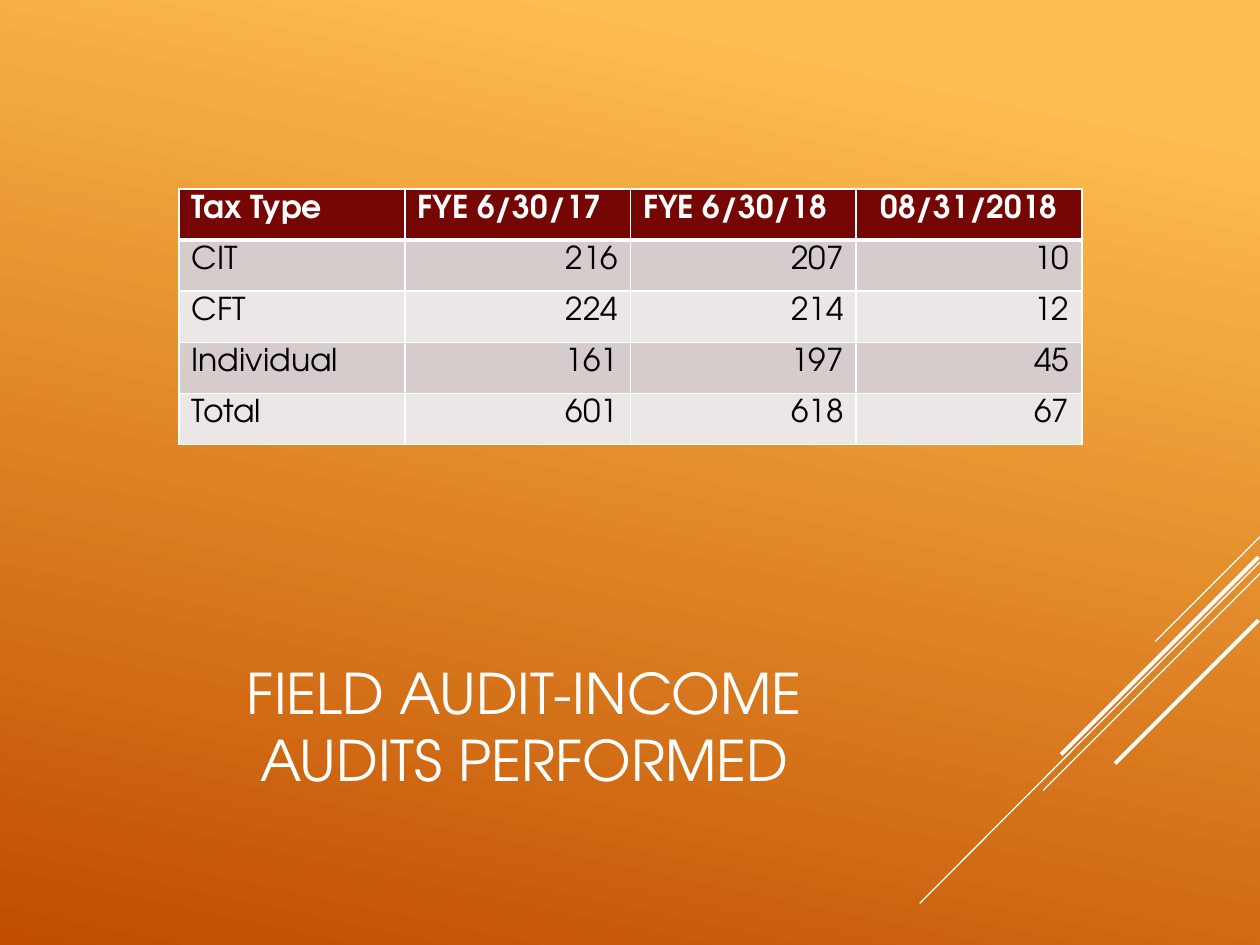
from lxml import etree
from pptx import Presentation, util as u
from pptx.dml.color import RGBColor
from pptx.enum import shapes, text
from pptx.oxml.ns import qn

COLORS = {"white": "FFFFFF", "black": "000000", "header": "760603", "odd": "D6CCCC",
          "even": "ECE7E7", "light": "FFBF50", "dark": "C04D00"}
ALIGN = {"l": text.PP_ALIGN.LEFT, "c": text.PP_ALIGN.CENTER, "r": text.PP_ALIGN.RIGHT}
ROWS = [("Tax Type", "FYE 6/30/17", "FYE 6/30/18", "08/31/2018"),
        ("CIT", "216", "207", "10"),
        ("CFT", "224", "214", "12"),
        ("Individual", "161", "197", "45"),
        ("Total", "601", "618", "67")]
STRIPES = [(25.4, 10.82, 23.29, 12.93, 0.75), (25.4, 11.33, 18.54, 18.21, 0.75),
           (25.4, 11.56, 21.03, 15.93, 0.75), (25.37, 11.23, 21.39, 15.21, 2.25),
           (25.37, 12.5, 22.48, 15.39, 2.25)]


def rgb(name):
    """Return the named colour."""
    return RGBColor.from_string(COLORS[name])


def write(tf, content, size=18, color="black", bold=False, align="l", font="TeX Gyre Adventor"):
    """Put formatted text into a text frame."""
    p = tf.paragraphs[0]
    p.text = content
    p.alignment = ALIGN[align]
    for r in p.runs:
        r.font.name, r.font.size, r.font.bold = font, u.Pt(size), bold
        r.font.color.rgb = rgb(color)


class Deck:
    """Hold the style and the current slide."""

    def __init__(self, prs):
        """Add a title-only slide."""
        self.s = prs.slides.add_slide(prs.slide_layouts[5])

    def background(self, angle):
        """Fill the background with a gradient."""
        fill = self.s.background.fill
        fill.gradient()
        fill.gradient_angle = angle
        for stop, name, pos in zip(fill.gradient_stops, ("light", "dark"), (0.1, 1)):
            stop.color.rgb, stop.position = rgb(name), pos

    def line(self, x1, y1, x2, y2, width):
        """Draw a white line."""
        sp = self.s.shapes.add_connector(shapes.MSO_CONNECTOR.STRAIGHT,
                                         *map(u.Cm, (x1, y1, x2, y2)))
        sp.line.color.rgb, sp.line.width = rgb("white"), u.Pt(width)
        etree.SubElement(sp._element.spPr, qn("a:effectLst"))

    def title(self, content, x, y, w, h):
        """Place and write the title."""
        sp = self.s.shapes.title
        sp.left, sp.top, sp.width, sp.height = map(u.Cm, (x, y, w, h))
        tf = sp.text_frame
        tf.word_wrap, tf.auto_size = True, text.MSO_AUTO_SIZE.NONE
        tf.vertical_anchor = text.MSO_ANCHOR.MIDDLE
        write(tf, content, size=32, color="white", align="c")

    def borders(self, cell, **widths):
        """Give a cell white borders, widths in points by side."""
        tcPr = cell._tc.get_or_add_tcPr()
        for i, (side, width) in enumerate(widths.items()):
            ln = etree.Element(qn(f"a:ln{side}"), w=str(u.Pt(width)))
            fill = etree.SubElement(ln, qn("a:solidFill"))
            etree.SubElement(fill, qn("a:srgbClr"), val=COLORS["white"])
            tcPr.insert(i, ln)

    def table(self, rows, x, y, col_w, row_h):
        """Add a banded table with a header row."""
        n, m = len(rows), len(rows[0])
        table = self.s.shapes.add_table(n, m, *map(u.Cm, (x, y, col_w * m, row_h * n))).table
        for i, row in enumerate(rows):
            table.rows[i].height = u.Cm(row_h)
            band = "header" if i == 0 else "odd" if i % 2 else "even"
            for j, value in enumerate(row):
                cell = table.cell(i, j)
                cell.fill.solid()
                cell.fill.fore_color.rgb = rgb(band)
                self.borders(cell, L=1, R=1, T=3 if i == 1 else 1, B=1 if i else 3)
                if i == 0:
                    write(cell.text_frame, value, color="white", bold=True,
                          align="c" if j == m - 1 else "l")
                else:
                    write(cell.text_frame, value, align="r" if j else "l")


def main():
    """Build and save the slide."""
    prs = Presentation()
    prs.slide_width, prs.slide_height = u.Cm(25.4), u.Cm(19.05)
    deck = Deck(prs)
    deck.background(258)
    for stripe in STRIPES:
        deck.line(*stripe)
    deck.title("FIELD AUDIT-INCOME\vAUDITS PERFORMED", 1.47, 12.5, 18.21, 4.24)
    deck.table(ROWS, 3.61, 3.81, 4.55, 1.03)
    prs.save("out.pptx")


if __name__ == "__main__":
    main()
